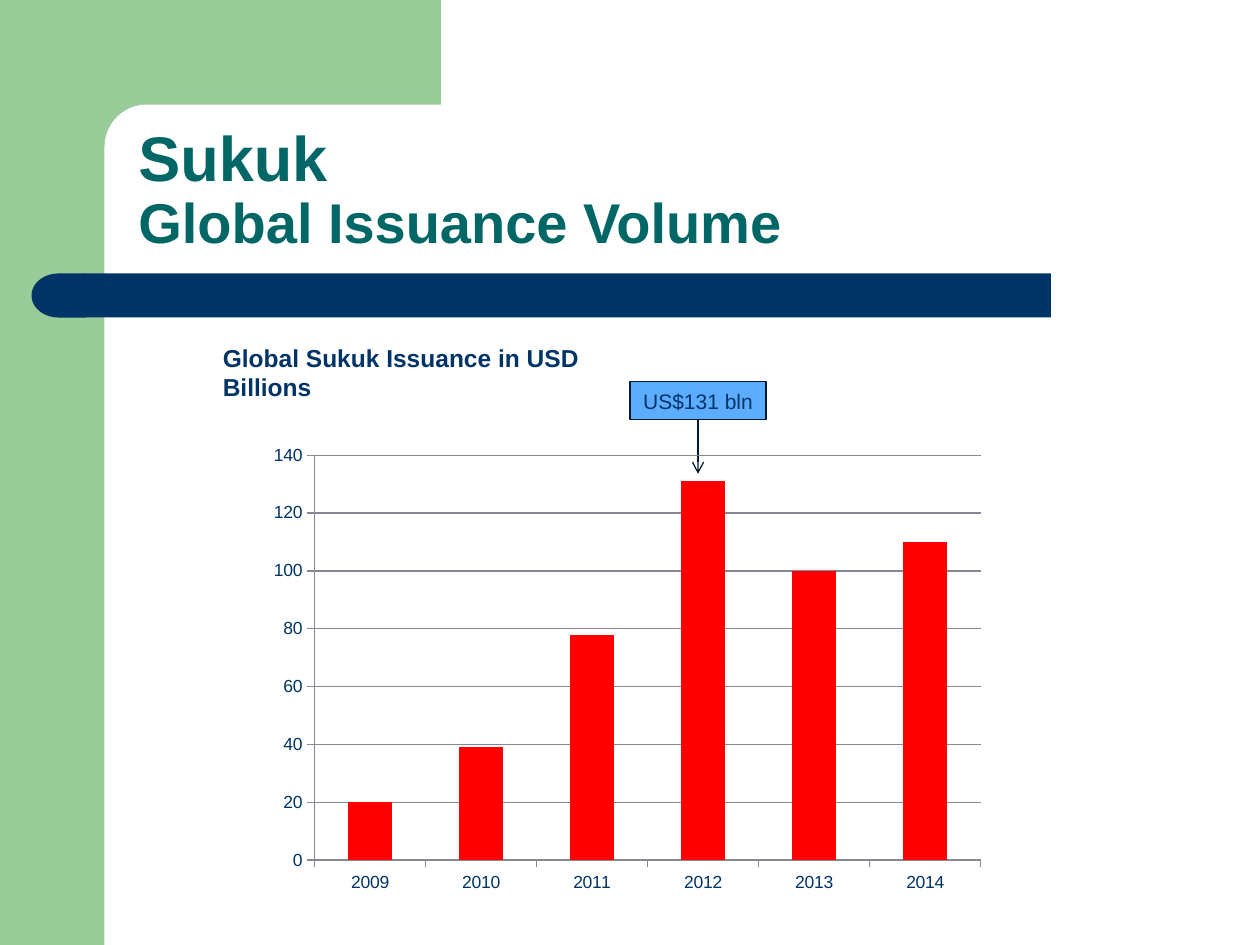
from dataclasses import dataclass

from lxml import etree
from pptx import Presentation
from pptx.chart.data import CategoryChartData
from pptx.dml.color import RGBColor
from pptx.enum import chart as charts, shapes, text
from pptx.oxml import ns, parse_xml
from pptx.util import Inches, Pt


@dataclass(frozen=True)
class Theme:
    font: str = "Arial"
    white: str = "FFFFFF"
    green: str = "99CC99"
    navy: str = "003366"
    teal: str = "006666"
    sky: str = "5CADFF"
    ink: str = "001933"
    bar: str = "FF0000"
    grid: str = "878794"
    title: int = 36
    subtitle: int = 32
    heading: int = 14
    callout: int = 12
    axis: int = 10


THEME = Theme()
PLOT = {"x": 0.083, "y": 0.074, "w": 0.881, "h": 0.839}
ISSUANCE = {"2009": 20, "2010": 39, "2011": 78, "2012": 131, "2013": 100, "2014": 110}


def rgb(value):
    return RGBColor.from_string(value)


def inches(*lengths):
    return [Inches(length) for length in lengths]


def style_font(font, size, color, bold=False):
    font.name = THEME.font
    font.size = Pt(size)
    font.bold = bold
    font.color.rgb = rgb(color)


def add_block(page, kind, place, fill, line=None):
    block = page.shapes.add_shape(kind, *inches(*place))
    block.shadow.inherit = False
    block.fill.solid()
    block.fill.fore_color.rgb = rgb(fill)
    if line:
        block.line.color.rgb = rgb(line)
        block.line.width = Pt(0.75)
    else:
        block.line.fill.background()
    return block


def add_background(page):
    kinds = shapes.MSO_SHAPE
    add_block(page, kinds.RECTANGLE, (0, 0, 0.83, 7.5), THEME.green)
    add_block(page, kinds.RECTANGLE, (0.75, 0, 2.75, 1.17), THEME.green)
    corner = add_block(page, kinds.ROUNDED_RECTANGLE, (0.83, 0.83, 5.58, 0.67), THEME.white)
    corner.adjustments[0] = 0.5
    add_block(page, kinds.RECTANGLE, (0.67, 2.17, 7.67, 0.35), THEME.navy)
    cap = add_block(page, kinds.FLOWCHART_DELAY, (0.25, 2.17, 0.43, 0.35), THEME.navy)
    cap.rotation = 180


def add_title(page, lines):
    box = page.shapes.add_textbox(*inches(1, 0.83, 8.75, 1.25))
    frame = box.text_frame
    frame.word_wrap = True
    frame.vertical_anchor = text.MSO_ANCHOR.BOTTOM
    para = frame.paragraphs[0]
    para.line_spacing = 0.9
    for index, (words, size) in enumerate(lines):
        if index:
            para.add_line_break()
        span = para.add_run()
        span.text = words
        style_font(span.font, size, THEME.teal, bold=True)


def add_heading(page, words):
    box = page.shapes.add_textbox(*inches(1.67, 2.67, 3.23, 0.34))
    box.text_frame.word_wrap = True
    para = box.text_frame.paragraphs[0]
    para.text = words
    style_font(para.font, THEME.heading, THEME.navy, bold=True)


def add_callout(page, words):
    box = add_block(page, shapes.MSO_SHAPE.RECTANGLE, (5, 3.03, 1.08, 0.3), THEME.sky, THEME.ink)
    box.text_frame.word_wrap = False
    para = box.text_frame.paragraphs[0]
    para.text = words
    para.alignment = text.PP_ALIGN.CENTER
    style_font(para.font, THEME.callout, THEME.navy)


def add_arrow(page, start, end):
    arrow = page.shapes.add_connector(shapes.MSO_CONNECTOR.STRAIGHT, *inches(*start, *end))
    arrow.line.color.rgb = rgb(THEME.ink)
    arrow.line.width = Pt(0.75)
    etree.SubElement(arrow.line._get_or_add_ln(), ns.qn("a:tailEnd"), type="arrow")
    etree.SubElement(arrow._element.spPr, ns.qn("a:effectLst"))


def set_plot_layout(chart):
    edges = "".join(f'<c:{key}Mode val="edge"/>' for key in "xy")
    sizes = "".join(f'<c:{key} val="{value}"/>' for key, value in PLOT.items())
    layout = parse_xml(
        f'<c:layout {ns.nsdecls("c")}><c:manualLayout><c:layoutTarget val="inner"/>'
        f"{edges}{sizes}</c:manualLayout></c:layout>"
    )
    area = chart._chartSpace.chart.plotArea
    for old in area.findall(ns.qn("c:layout")):
        area.remove(old)
    area.insert(0, layout)


def add_column_chart(page, values):
    data = CategoryChartData()
    data.categories = list(values)
    data.add_series("Series 1", list(values.values()))
    frame = page.shapes.add_chart(
        charts.XL_CHART_TYPE.COLUMN_CLUSTERED, *inches(2, 3.33, 6, 3.83), data
    )
    chart = frame.chart
    chart.has_title = False
    chart.has_legend = False
    style_font(chart.font, THEME.axis, THEME.navy)
    plot = chart.plots[0]
    plot.gap_width = 150
    plot.vary_by_categories = False
    fill = plot.series[0].format.fill
    fill.solid()
    fill.fore_color.rgb = rgb(THEME.bar)
    scale = chart.value_axis
    scale.minimum_scale, scale.maximum_scale, scale.major_unit = 0, 140, 20
    scale.has_major_gridlines = True
    for axis in (chart.category_axis, scale):
        axis.major_tick_mark = charts.XL_TICK_MARK.OUTSIDE
    for part in (chart.category_axis, scale, scale.major_gridlines):
        part.format.line.color.rgb = rgb(THEME.grid)
        part.format.line.width = Pt(0.75)
    set_plot_layout(chart)


def main():
    deck = Presentation()
    deck.slide_width, deck.slide_height = inches(10, 7.5)
    page = deck.slides.add_slide(deck.slide_layouts[6])
    add_background(page)
    add_title(page, [("Sukuk", THEME.title), ("Global Issuance Volume", THEME.subtitle)])
    add_heading(page, "Global Sukuk Issuance in USD Billions")
    add_callout(page, "US$131 bln")
    add_arrow(page, (5.54, 3.33), (5.54, 3.76))
    add_column_chart(page, ISSUANCE)
    deck.save("out.pptx")


if __name__ == "__main__":
    main()
